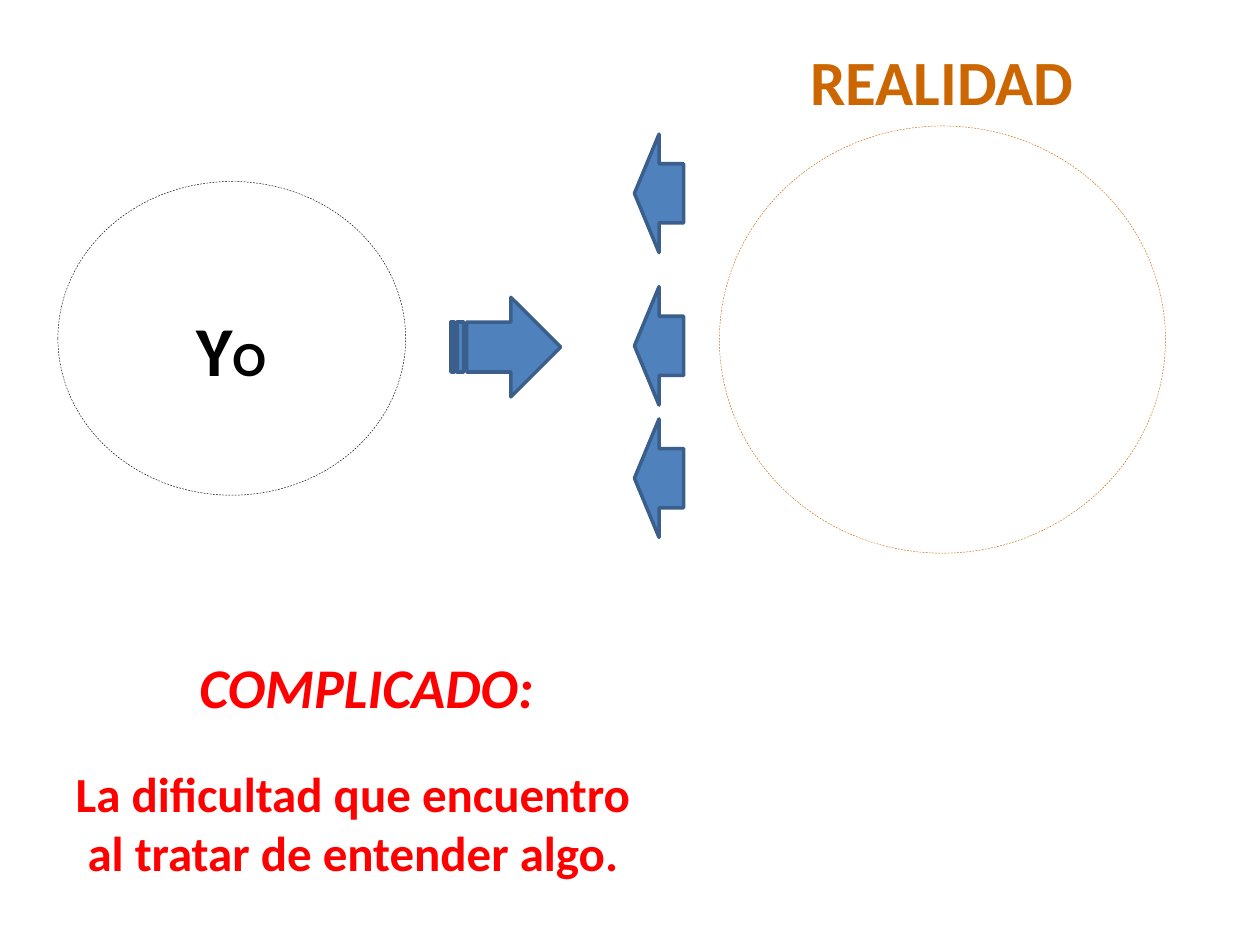
import pptx
import pptx.dml.color
import pptx.enum.dml
import pptx.enum.shapes
import pptx.enum.text
import pptx.util

Inches = pptx.util.Inches
Pt = pptx.util.Pt
SHAPES = pptx.enum.shapes.MSO_SHAPE
ALIGN = pptx.enum.text.PP_ALIGN

FONT = "Calibri"
COLORS = {
    "white": "FFFFFF",
    "black": "000000",
    "orange": "CC6600",
    "red": "FF0000",
    "blue": "4F81BD",
    "dark_blue": "3A5F8C",
}


def color(name):
    return pptx.dml.color.RGBColor.from_string(COLORS[name])


def add_figure(slide, kind, box, fill, line, width):
    shape = slide.shapes.add_shape(kind, *map(Inches, box))
    shape.shadow.inherit = False
    shape.fill.solid()
    shape.fill.fore_color.rgb = color(fill)
    shape.line.color.rgb = color(line)
    shape.line.width = Pt(width)
    return shape


def add_circle(slide, box, line):
    shape = add_figure(slide, SHAPES.OVAL, box, "white", line, 0.25)
    shape.line.dash_style = pptx.enum.dml.MSO_LINE.DASH


def add_arrow(slide, kind, box, rotation=0):
    shape = add_figure(slide, kind, box, "blue", "dark_blue", 2)
    shape.rotation = rotation


def add_label(slide, box, runs, text_color, align=ALIGN.CENTER, wrap=False, italic=False):
    shape = slide.shapes.add_textbox(*map(Inches, box))
    frame = shape.text_frame
    frame.word_wrap = wrap
    frame.auto_size = pptx.enum.text.MSO_AUTO_SIZE.SHAPE_TO_FIT_TEXT
    paragraph = frame.paragraphs[0]
    paragraph.alignment = align
    for text, size in runs:
        run = paragraph.add_run()
        run.text = text
        run.font.name = FONT
        run.font.size = Pt(size)
        run.font.bold = True
        run.font.italic = italic
        run.font.color.rgb = color(text_color)


def main():
    presentation = pptx.Presentation()
    presentation.slide_width = Inches(10)
    presentation.slide_height = Inches(7.5)
    slide = presentation.slides.add_slide(presentation.slide_layouts[6])

    add_circle(slide, (0.46, 1.44, 2.76, 2.49), "black")
    add_circle(slide, (5.71, 1, 3.54, 3.39), "orange")
    add_label(slide, (1.46, 2.38, 0.76, 0.77), [("Y", 40), ("O", 28)], "black", ALIGN.LEFT)
    add_label(slide, (6.32, 0.29, 2.31, 0.71), [("REALIDAD", 36)], "orange")

    for top in (1.34, 2.55, 3.6):
        add_arrow(slide, SHAPES.DOWN_ARROW, (4.76, top, 0.94, 0.39), rotation=90)

    add_label(slide, (0.44, 6.01, 4.72, 1.04),
              [("La dificultad que encuentro al tratar de entender algo.", 28)],
              "red", wrap=True)
    add_label(slide, (1.47, 5.13, 2.88, 0.64), [("COMPLICADO:", 32)], "red", italic=True)
    add_arrow(slide, SHAPES.STRIPED_RIGHT_ARROW, (3.58, 2.36, 0.87, 0.79))

    presentation.save("out.pptx")


if __name__ == "__main__":
    main()
